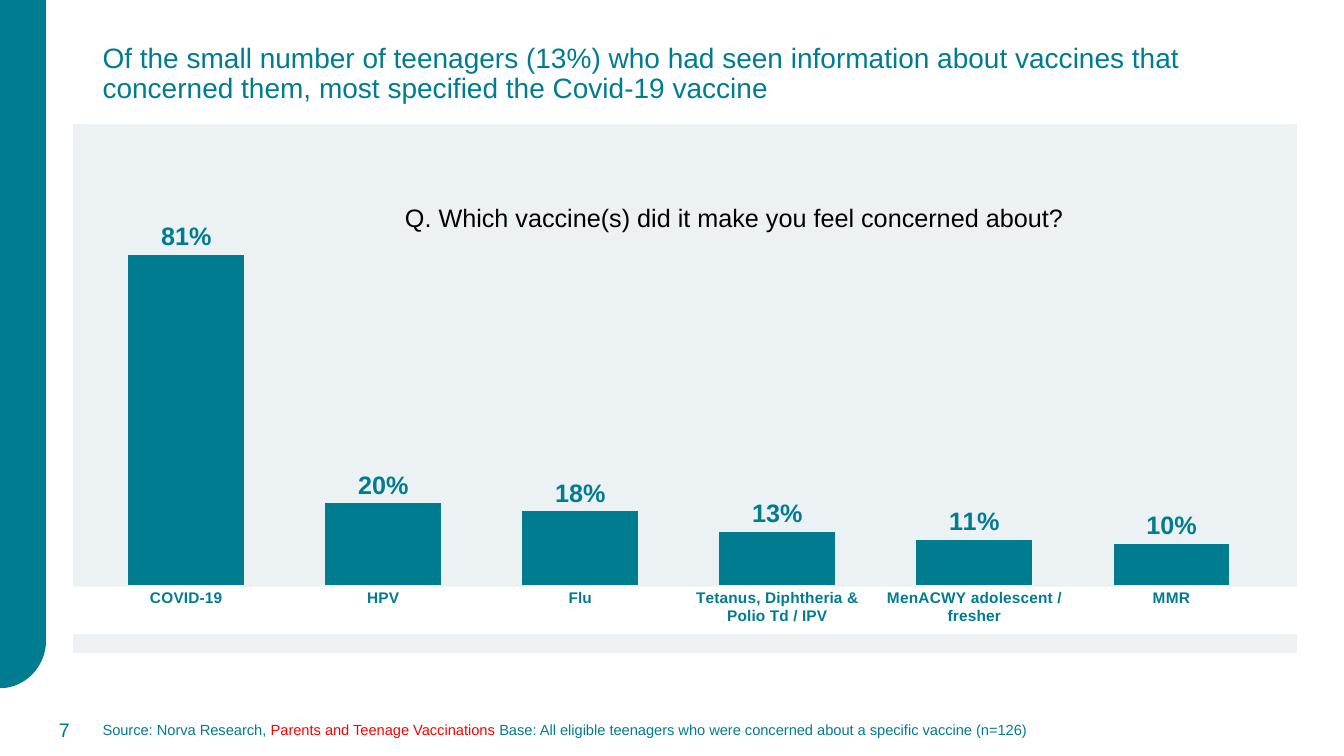
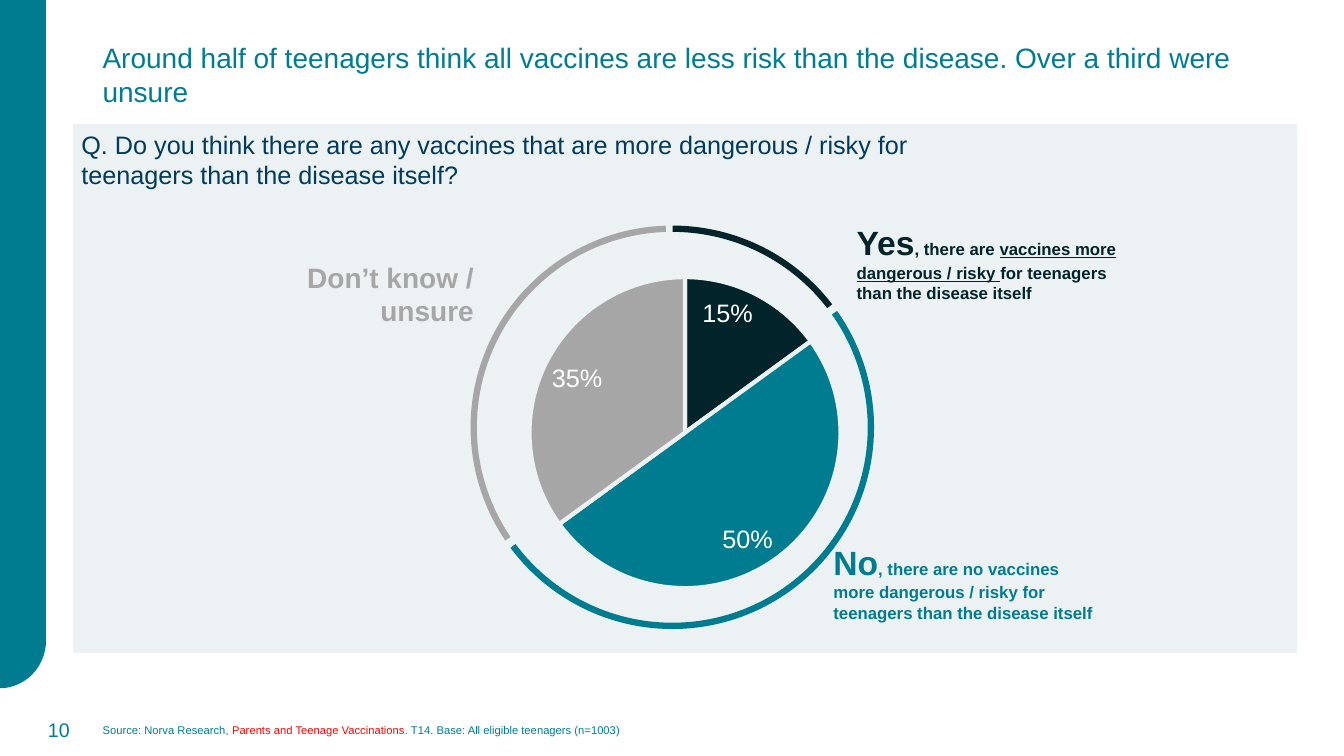
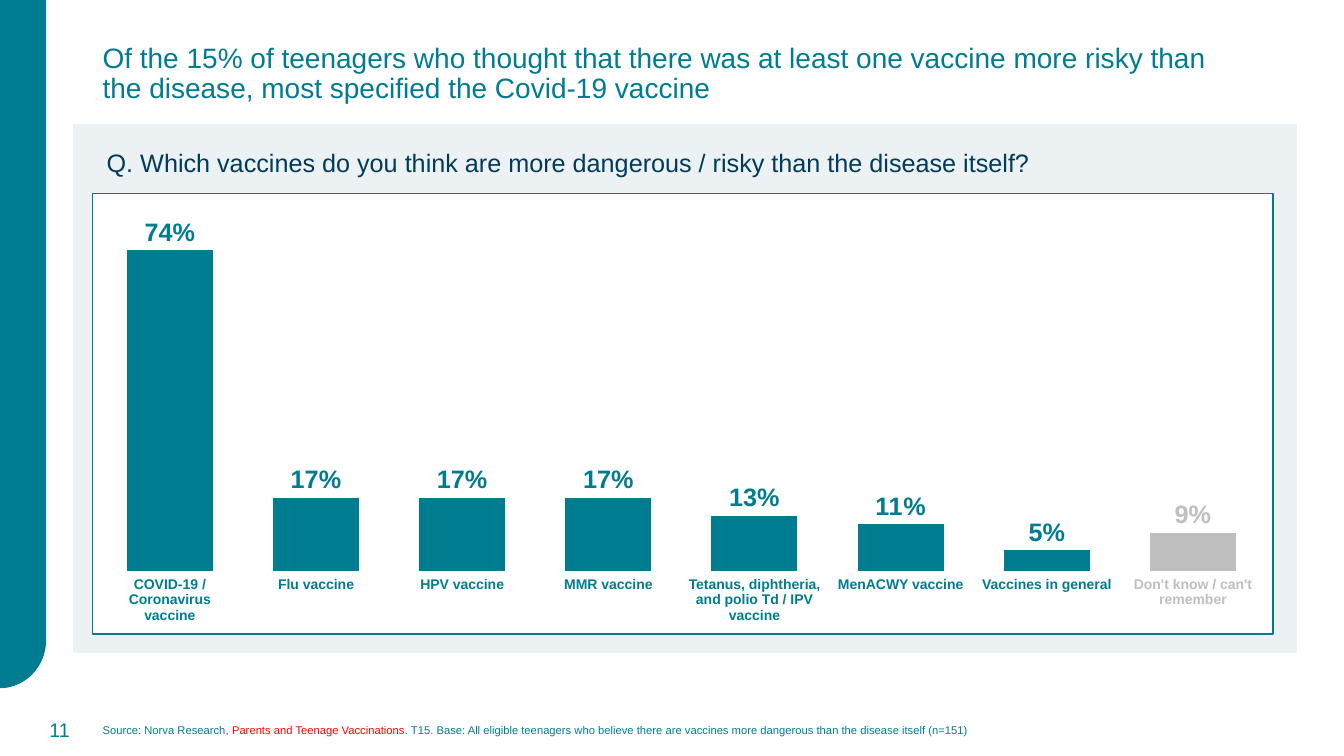
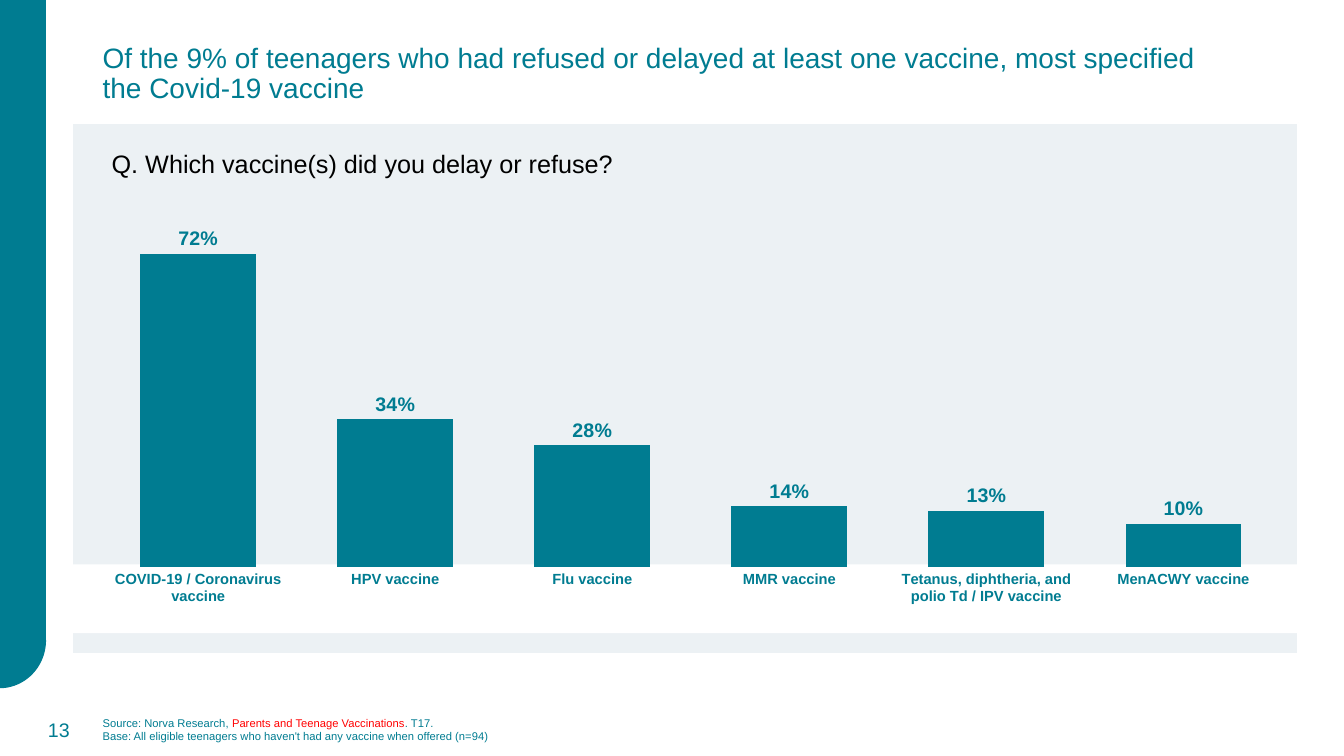
from pptx import Presentation
from pptx.chart.data import CategoryChartData
from pptx.dml.color import RGBColor
from pptx.enum.chart import XL_CHART_TYPE as ChartType
from pptx.enum.chart import XL_LABEL_POSITION as LabelPosition
from pptx.enum.chart import XL_TICK_MARK as TickMark
from pptx.enum.shapes import MSO_SHAPE as Shape
from pptx.enum.text import MSO_ANCHOR as Anchor
from pptx.enum.text import PP_ALIGN as Align
from pptx.oxml import parse_xml
from pptx.oxml.ns import nsdecls
from pptx.util import Pt

FONT = "Arial"
TEAL, DARK, NAVY = "007C91", "00242A", "003B5C"
GREY, PALE_GREY, PANEL = "A6A6A6", "BFBFBF", "ECF1F4"
WHITE, BLACK, RED = "FFFFFF", "000000", "FF0000"
PANEL_LEFT, PANEL_WIDTH = 51.1, 876.2


def rgb(color):
    return RGBColor.from_string(color)


def box_of(*lengths):
    return [Pt(length) for length in lengths]


def style_font(font, size, color, bold=None, underline=None):
    font.name, font.size = FONT, Pt(size)
    font.color.rgb = rgb(color)
    font.bold, font.underline = bold, underline


def add_span(para, text, **format):
    span = para.add_run()
    span.text = text
    style_font(span.font, **format)


class DeckBuilder:
    def __init__(self):
        self.deck = Presentation()
        self.deck.slide_width, self.deck.slide_height = Pt(960), Pt(540)
        self.page = None

    # Parts shared by all slides
    def new_page(self, number, title, source, source_size=8, title_spacing=0.9):
        self.page = self.deck.slides.add_slide(self.deck.slide_layouts[6])
        self.shape(Shape.RECTANGLE, (0, 0, 32.4, 457.2), TEAL, TEAL)
        corner = self.shape(Shape.PIE, (-33.1, 423.4, 65.5, 67.7), TEAL, TEAL,
                            angles=(180, 270))
        corner.rotation = 180
        self.text((66.2, 0.7, 828, 104.4), [[(title, {})]], size=20,
                  anchor=Anchor.MIDDLE, spacing=title_spacing)
        lead = [("Source: Norva Research, ", {}),
                ("Parents and Teenage Vaccinations", {"color": RED})]
        first, *others = source
        self.text((66.2, 506.9, 835.2, 28.8),
                  [lead + [(first, {})]] + [[(line, {})] for line in others],
                  size=source_size, anchor=Anchor.MIDDLE)
        self.text((10.1, 506.9, 46.8, 28.8), [[(str(number), {})]], size=14,
                  anchor=Anchor.MIDDLE, align=Align.RIGHT)
        self.shape(Shape.RECTANGLE, (PANEL_LEFT, 87.8, PANEL_WIDTH, 379.4),
                   PANEL, WHITE, 1.5)

    # Basic elements
    def shape(self, kind, at, fill=None, line=None, width=1, angles=None):
        item = self.page.shapes.add_shape(kind, *box_of(*at))
        item.shadow.inherit = False
        if fill:
            item.fill.solid()
            item.fill.fore_color.rgb = rgb(fill)
        else:
            item.fill.background()
        if line:
            item.line.color.rgb = rgb(line)
            item.line.width = Pt(width)
        else:
            item.line.fill.background()
        for index, degrees in enumerate(angles or ()):
            item.adjustments[index] = degrees * 0.6
        return item

    def text(self, at, paras, anchor=Anchor.TOP, align=Align.LEFT, spacing=None,
             color=TEAL, **format):
        frame = self.page.shapes.add_textbox(*box_of(*at)).text_frame
        frame.word_wrap = True
        frame.vertical_anchor = anchor
        for index, spans in enumerate(paras):
            para = frame.add_paragraph() if index else frame.paragraphs[0]
            para.alignment = align
            para.line_spacing = spacing
            for words, changes in spans:
                add_span(para, words, **{"color": color, **format, **changes})

    def question(self, at, words, color=BLACK):
        self.text(at, [[(words, {})]], size=18, color=color)

    def label_band(self, top, height):
        self.shape(Shape.RECTANGLE, (PANEL_LEFT, top, PANEL_WIDTH, height), WHITE)

    # Charts
    def chart(self, kind, at, names, values, layout, label_position, **label_format):
        data = CategoryChartData(number_format="0%")
        data.categories = names
        data.add_series("Series 1", values)
        chart = self.page.shapes.add_chart(kind, *box_of(*at), data).chart
        chart.has_legend = chart.has_title = False
        style_font(chart.font, 10, BLACK)
        plot = chart.plots[0]
        plot.vary_by_categories = False
        plot.has_data_labels = True
        labels = plot.data_labels
        labels.show_value = True
        labels.number_format, labels.number_format_is_linked = "0%", False
        labels.position = label_position
        style_font(labels.font, **label_format)
        area = chart.element.xpath("c:chart/c:plotArea")[0]
        for old in area.xpath("c:layout"):
            area.remove(old)
        sizes = "".join(f'<c:{tag} val="{value}"/>' for tag, value in zip("xywh", layout))
        area.insert(0, parse_xml(
            f'<c:layout {nsdecls("c")}><c:manualLayout><c:layoutTarget val="inner"/>'
            f'<c:xMode val="edge"/><c:yMode val="edge"/>{sizes}'
            f'</c:manualLayout></c:layout>'))
        return chart

    def bars(self, at, names, values, top, label_size=18, name_size=None, left=0.006):
        chart = self.chart(ChartType.COLUMN_CLUSTERED, at, names, values,
                           (left, 0.033, 1 - left, 0.79), LabelPosition.OUTSIDE_END,
                           size=label_size, color=TEAL, bold=True)
        plot = chart.plots[0]
        plot.gap_width = 70
        series = plot.series[0]
        series.format.fill.solid()
        series.format.fill.fore_color.rgb = rgb(TEAL)
        scale, axis = chart.value_axis, chart.category_axis
        scale.minimum_scale, scale.maximum_scale = 0, top
        scale.has_major_gridlines = scale.visible = False
        if name_size:
            axis.major_tick_mark = axis.minor_tick_mark = TickMark.NONE
            axis.format.line.fill.background()
            style_font(axis.tick_labels.font, name_size, TEAL, bold=True)
        else:
            axis.visible = False
        return series

    def pie(self, at, names, values, colors, layout):
        chart = self.chart(ChartType.PIE, at, names, values, layout,
                           LabelPosition.INSIDE_END, size=18, color=WHITE, bold=False)
        for index, color in enumerate(colors):
            slice_format = chart.plots[0].series[0].points[index].format
            slice_format.fill.solid()
            slice_format.fill.fore_color.rgb = rgb(color)
            slice_format.line.color.rgb = rgb(PANEL)
            slice_format.line.width = Pt(3)

    # Table of bar names
    def name_row(self, at, names, last_color):
        table = self.page.shapes.add_table(1, len(names), *box_of(*at)).table
        table.first_row = table.horz_banding = False
        for index, name in enumerate(names):
            cell = table.cell(0, index)
            cell.fill.background()
            cell.margin_left = cell.margin_right = Pt(3.6)
            cell.margin_top = cell.margin_bottom = Pt(3.6)
            para = cell.text_frame.paragraphs[0]
            para.alignment = Align.CENTER
            color = last_color if index == len(names) - 1 else TEAL
            add_span(para, name, size=10, color=color, bold=True)


def concern_slide(builder):
    builder.new_page(
        7, "Of the small number of teenagers (13%) who had seen information about "
        "vaccines that concerned them, most specified the Covid-19 vaccine",
        [" Base: All eligible teenagers who were concerned about a specific vaccine (n=126)"],
        source_size=10.5)
    builder.label_band(419, 33.8)
    builder.bars((57.6, 144.7, 849.6, 331.9),
                 ["COVID-19", "HPV", "Flu", "Tetanus, Diphtheria & Polio Td / IPV",
                  "MenACWY adolescent / fresher", "MMR"],
                 [0.81, 0.2, 0.18, 0.13, 0.11, 0.1], top=0.9, name_size=11)
    builder.question((282.2, 141.1, 514.8, 28.8),
                     "Q. Which vaccine(s) did it make you feel concerned about?")


def risk_slide(builder):
    builder.new_page(
        10, "Around half of teenagers think all vaccines are less risk than the disease. "
        "Over a third were unsure",
        [". T14. Base: All eligible teenagers (n=1003)"], title_spacing=None)
    builder.pie((321.1, 167.8, 317.5, 274.3), ["1", "2", "3"], [0.15, 0.5, 0.35],
                [DARK, TEAL, GREY], (0.18, 0.11, 0.7, 0.81))
    # Ring around the pie
    for color, angles in ((DARK, (270.1, 322.44)), (TEAL, (324.77, 143.32)),
                          (GREY, (145.84, 268.14))):
        builder.shape(Shape.ARC, (338.4, 163.4, 283.7, 283.7), line=color, width=4.5,
                      angles=angles)
    # Answers
    big = {"size": 24}
    answers = [
        ((588.2, 393.1, 207.4, 45.4), TEAL, 12, Align.LEFT,
         [("No", big), (", there are no vaccines more dangerous / risky for teenagers "
                        "than the disease itself", {})]),
        ((604.8, 164.9, 207.4, 45.4), DARK, 12, Align.LEFT,
         [("Yes", big), (", there are ", {}),
          ("vaccines more dangerous / risky ", {"underline": True}),
          ("for teenagers than the disease itself", {})]),
        ((180, 187.2, 165.6, 45.4), GREY, 20, Align.RIGHT,
         [("Don’t know / unsure", {})]),
    ]
    for at, color, size, align, spans in answers:
        builder.text(at, [spans], anchor=Anchor.MIDDLE, align=align, color=color,
                     size=size, bold=True)
    builder.question((51.1, 88.6, 684, 51.1),
                     "Q. Do you think there are any vaccines that are more dangerous / "
                     "risky for teenagers than the disease itself?", NAVY)


def risky_vaccines_slide(builder):
    builder.new_page(
        11, "Of the 15% of teenagers who thought that there was at least one vaccine "
        "more risky than the disease, most specified the Covid-19 vaccine",
        [". T15. Base: All eligible teenagers who believe there are vaccines more "
         "dangerous than the disease itself (n=151)"])
    builder.shape(Shape.RECTANGLE, (66.2, 138.2, 843.1, 314.6), WHITE, TEAL)
    names = ["COVID-19 / Coronavirus vaccine", "Flu vaccine", "HPV vaccine", "MMR vaccine",
             "Tetanus, diphtheria, and polio Td / IPV vaccine", "MenACWY vaccine",
             "Vaccines in general", "Don't know / can't remember"]
    series = builder.bars((69.1, 149.8, 835.2, 314.6),
                          [str(number + 1) for number in range(len(names))],
                          [0.74, 0.17, 0.17, 0.17, 0.13, 0.11, 0.05, 0.09],
                          top=0.8, left=0)
    # Grey bar for the unsure
    unsure = series.points[len(names) - 1]
    unsure.format.fill.solid()
    unsure.format.fill.fore_color.rgb = rgb(PALE_GREY)
    style_font(unsure.data_label.font, 18, PALE_GREY, bold=True)
    unsure.data_label.position = LabelPosition.OUTSIDE_END
    # The series holds its own labels once one point differs
    labels = series.data_labels
    labels.show_value = True
    labels.number_format, labels.number_format_is_linked = "0%", False
    labels.position = LabelPosition.OUTSIDE_END
    style_font(labels.font, 18, TEAL, bold=True)
    builder.name_row((69.1, 408.2, 835.2, 43.2), names, PALE_GREY)
    builder.question((69.1, 101.5, 690.5, 28.8),
                     "Q. Which vaccines do you think are more dangerous / risky than the "
                     "disease itself?", NAVY)


def refusal_slide(builder):
    builder.new_page(
        13, "Of the 9% of teenagers who had refused or delayed at least one vaccine, "
        "most specified the Covid-19 vaccine",
        [". T17.",
         "Base: All eligible teenagers who haven't had any vaccine when offered (n=94)"])
    builder.label_band(403.2, 49)
    builder.bars((66.2, 146.2, 849.6, 314.6),
                 ["COVID-19 / Coronavirus vaccine", "HPV vaccine", "Flu vaccine",
                  "MMR vaccine", "Tetanus, diphtheria, and polio Td / IPV vaccine",
                  "MenACWY vaccine"],
                 [0.72, 0.34, 0.28, 0.14, 0.13, 0.1], top=0.8, label_size=14,
                 name_size=10.5)
    builder.question((72.7, 102.2, 444.2, 28.8),
                     "Q. Which vaccine(s) did you delay or refuse?")


def main():
    builder = DeckBuilder()
    for build_slide in (concern_slide, risk_slide, risky_vaccines_slide, refusal_slide):
        build_slide(builder)
    builder.deck.save("out.pptx")


if __name__ == "__main__":
    main()
